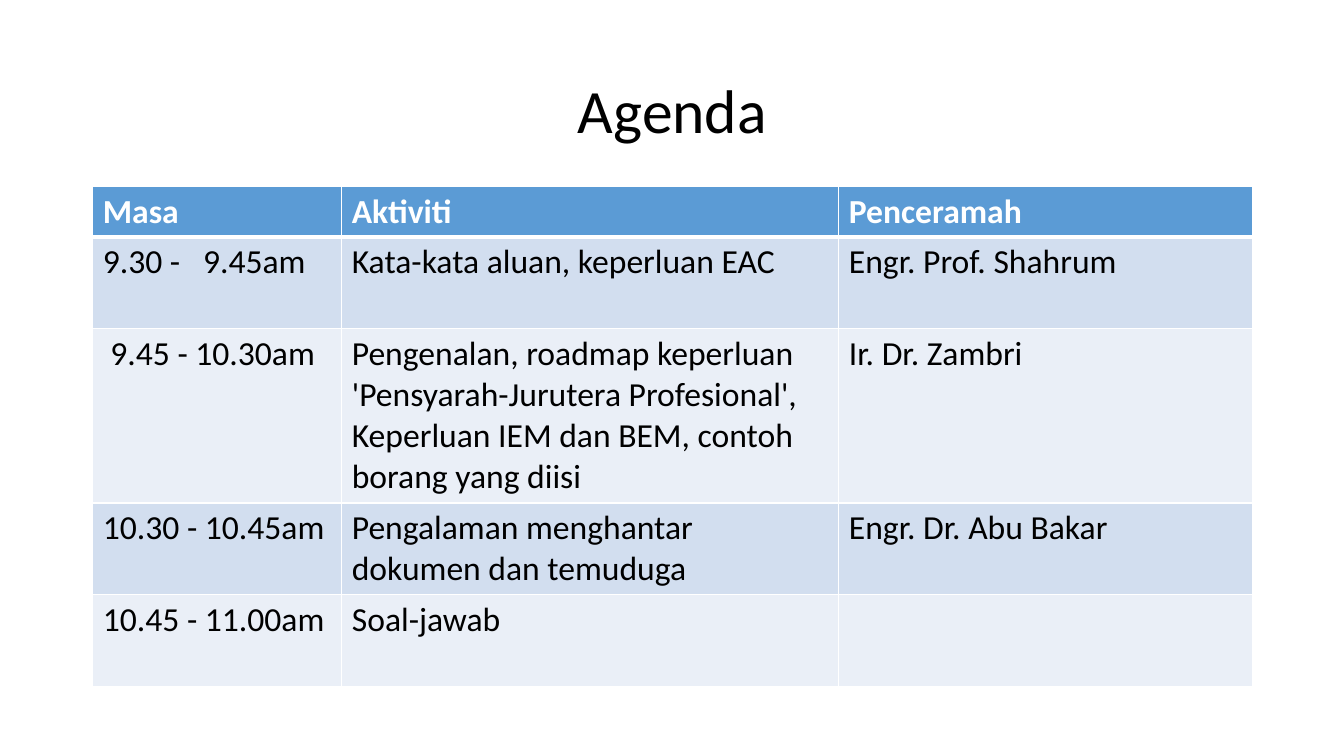
from lxml import etree
from pptx import Presentation
from pptx.dml.color import RGBColor
from pptx.enum.text import MSO_ANCHOR as Anchor, PP_ALIGN as Align
from pptx.oxml.ns import qn
from pptx.util import Inches, Pt

# Content
TITLE = "Agenda"
AGENDA = [
    ("Masa", "Aktiviti", "Penceramah"),
    ("9.30 -   9.45am", "Kata-kata aluan, keperluan EAC", "Engr. Prof. Shahrum"),
    (" 9.45 - 10.30am",
     "Pengenalan, roadmap keperluan 'Pensyarah-Jurutera Profesional', "
     "Keperluan IEM dan BEM, contoh borang yang diisi",
     "Ir. Dr. Zambri"),
    ("10.30 - 10.45am", "Pengalaman menghantar dokumen dan temuduga",
     "Engr. Dr. Abu Bakar"),
    ("10.45 - 11.00am", "Soal-jawab", ""),
]
COLUMN_WIDTHS = [2.47, 4.93, 4.1]
ROW_HEIGHTS = [0.5, 0.91, 1.73, 0.91, 0.91]
LEFT, TITLE_TOP, TITLE_HEIGHT = 0.92, 0.4, 1.45
WIDTH = sum(COLUMN_WIDTHS)
HEADER_FILL, BAND_FILLS = "5B9BD5", ("D2DEEF", "EAEFF7")
WHITE, BLACK = "FFFFFF", "000000"


def color(value):
    return RGBColor.from_string(value)


def style(para, size, value, bold=False):
    para.font.name = "Calibri"
    para.font.size = Pt(size)
    para.font.bold = bold
    para.font.color.rgb = color(value)


def set_borders(cell, widths):
    """Draw white borders; they must come before the fill in the cell XML."""
    properties = cell._tc.get_or_add_tcPr()
    for index, (side, width) in enumerate(widths.items()):
        line = etree.Element(qn(f"a:ln{side}"), w=str(Pt(width)))
        fill = etree.SubElement(line, qn("a:solidFill"))
        etree.SubElement(fill, qn("a:srgbClr"), val=WHITE)
        properties.insert(index, line)


# Slide
deck = Presentation()
deck.slide_width, deck.slide_height = Inches(13.33), Inches(7.5)
page = deck.slides.add_slide(deck.slide_layouts[6])

# Title
box = page.shapes.add_textbox(Inches(LEFT), Inches(TITLE_TOP),
                              Inches(WIDTH), Inches(TITLE_HEIGHT))
box.text_frame.word_wrap = True
box.text_frame.vertical_anchor = Anchor.MIDDLE
para = box.text_frame.paragraphs[0]
para.text = TITLE
para.alignment = Align.CENTER
para.line_spacing = 0.9
style(para, 44, BLACK)

# Agenda table
table = page.shapes.add_table(
    len(AGENDA), len(COLUMN_WIDTHS), Inches(LEFT), Inches(TITLE_TOP + TITLE_HEIGHT),
    Inches(WIDTH), Inches(sum(ROW_HEIGHTS))).table
for column, width in zip(table.columns, COLUMN_WIDTHS):
    column.width = Inches(width)
for row, height in zip(table.rows, ROW_HEIGHTS):
    row.height = Inches(height)

for r, entry in enumerate(AGENDA):
    header = r == 0
    for c, text in enumerate(entry):
        cell = table.cell(r, c)
        cell.fill.solid()
        cell.fill.fore_color.rgb = color(HEADER_FILL if header else BAND_FILLS[(r - 1) % 2])
        set_borders(cell, {"L": 1, "R": 1, "T": 3 if r == 1 else 1, "B": 3 if header else 1})
        para = cell.text_frame.paragraphs[0]
        para.text = text
        style(para, 24, WHITE if header else BLACK, bold=header)

deck.save("out.pptx")
